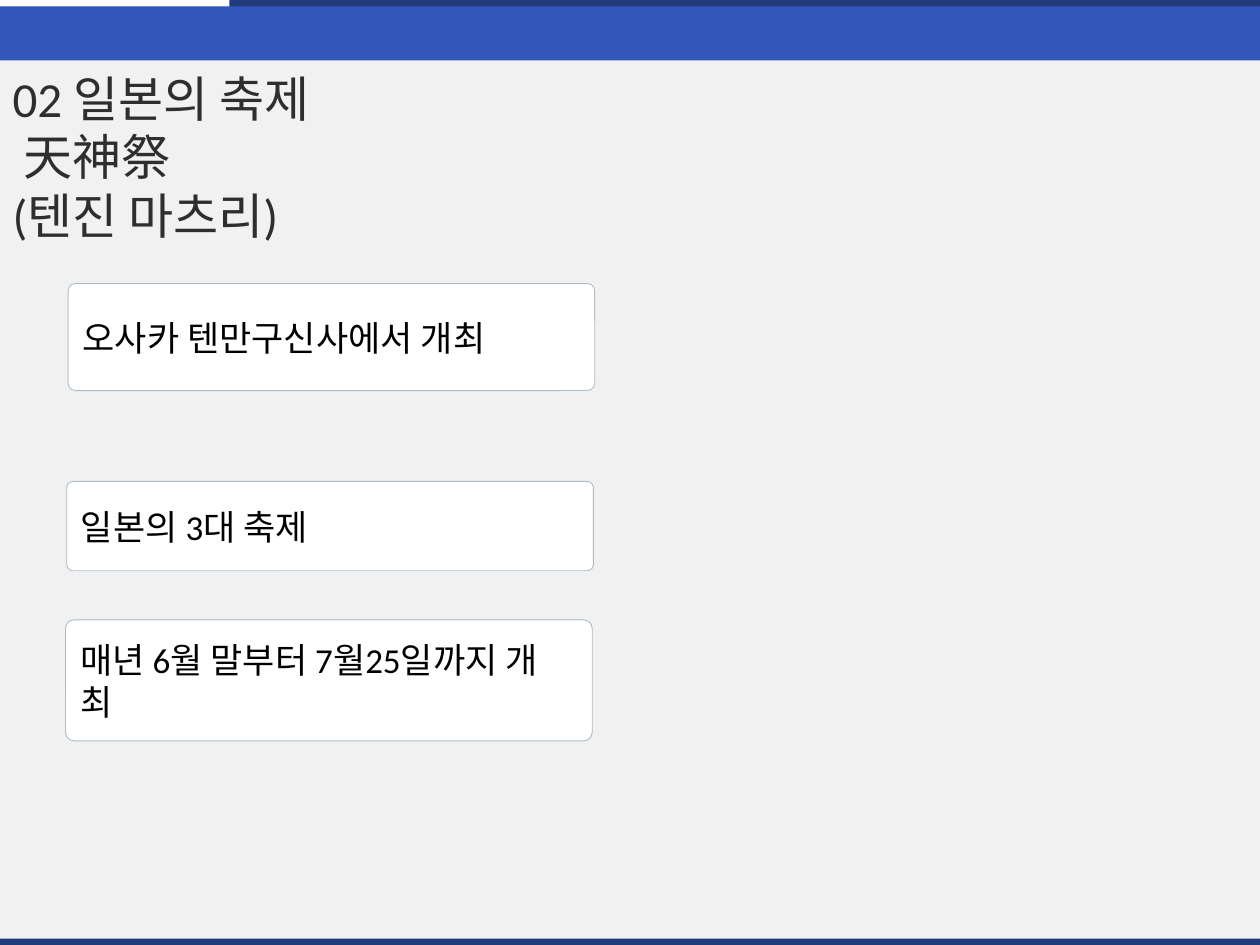
from lxml.etree import SubElement
from pptx import Presentation
from pptx.dml.color import RGBColor
from pptx.enum.shapes import MSO_SHAPE as Shape
from pptx.enum.text import MSO_ANCHOR as Anchor, MSO_AUTO_SIZE as AutoSize, PP_ALIGN as Align
from pptx.oxml.ns import qn
from pptx.util import Inches, Pt

WHITE = RGBColor(0xFF, 0xFF, 0xFF)
BLACK = RGBColor(0x00, 0x00, 0x00)
PALE_GREY = RGBColor(0xF1, 0xF1, 0xF1)
BLUE = RGBColor(0x30, 0x57, 0xB9)
NAVY = RGBColor(0x20, 0x3A, 0x7B)
CARD_LINE = RGBColor(0x1F, 0x4E, 0x79)
TITLE_GREY = RGBColor(0x2D, 0x2E, 0x2D)
FONT = "Calibri"

# Content
TITLE_LINES = ["02 일본의 축제", " 天神祭", "(텐진 마츠리)"]
# Cards: left, top, height, text runs with their sizes
CARDS = [
    (0.54, 2.25, 0.85, [("오사카 텐만구신사에서 개최", 20), (" ", 18)]),
    (0.53, 3.82, 0.71, [("일본의 3대 축제", 20)]),
    (0.52, 4.92, 0.96, [("매년 6월 말부터 7월25일까지 개\t최", 20)]),
]
CARD_WIDTH = 4.18
CARD_TAB = 0.65

# Bands: left, top, width, height, colour
SLIDE_WIDTH, SLIDE_HEIGHT, STRIP = 10, 7.5, 0.05
BANDS = [
    (0, 0, SLIDE_WIDTH, SLIDE_HEIGHT, PALE_GREY),
    (0, 0.03, SLIDE_WIDTH, 0.45, BLUE),
    (0, 0, SLIDE_WIDTH, STRIP, NAVY),
    (0, 0, 1.82, STRIP, WHITE),
    (0, SLIDE_HEIGHT - STRIP, SLIDE_WIDTH, STRIP, NAVY),
]


def add_box(slide, kind, left, top, width, height, colour):
    shape = slide.shapes.add_shape(
        kind, Inches(left), Inches(top), Inches(width), Inches(height))
    shape.shadow.inherit = False
    shape.fill.solid()
    shape.fill.fore_color.rgb = colour
    shape.line.fill.background()
    return shape


def add_run(paragraph, text, size, colour):
    run = paragraph.add_run()
    run.text = text
    run.font.name = FONT
    run.font.size = Pt(size)
    run.font.color.rgb = colour


def add_card(slide, left, top, height, runs):
    card = add_box(slide, Shape.ROUNDED_RECTANGLE, left, top, CARD_WIDTH, height, WHITE)
    card.adjustments[0] = 0.07
    card.line.color.rgb = CARD_LINE
    card.line.width = Pt(0.5)
    line_colour = card.line._get_or_add_ln().find(".//" + qn("a:srgbClr"))
    SubElement(line_colour, qn("a:alpha"), val="35000")

    frame = card.text_frame
    frame.word_wrap = True
    frame.vertical_anchor = Anchor.MIDDLE
    paragraph = frame.paragraphs[0]
    paragraph.alignment = Align.LEFT
    if any("\t" in text for text, _ in runs):
        tab_list = SubElement(paragraph._p.get_or_add_pPr(), qn("a:tabLst"))
        SubElement(tab_list, qn("a:tab"), pos=str(Inches(CARD_TAB)), algn="l")
    for text, size in runs:
        add_run(paragraph, text, size, BLACK)


def fill_title(title):
    title.left, title.top = Inches(0), Inches(0.49)
    title.width, title.height = Inches(9.61), Inches(1.49)
    frame = title.text_frame
    frame.word_wrap = True
    frame.auto_size = AutoSize.SHAPE_TO_FIT_TEXT
    frame.vertical_anchor = Anchor.TOP
    for index, line in enumerate(TITLE_LINES):
        paragraph = frame.add_paragraph() if index else frame.paragraphs[0]
        paragraph.alignment = Align.LEFT
        add_run(paragraph, line, 28, TITLE_GREY)


def main():
    presentation = Presentation()
    presentation.slide_width = Inches(SLIDE_WIDTH)
    presentation.slide_height = Inches(SLIDE_HEIGHT)
    slide = presentation.slides.add_slide(presentation.slide_layouts[5])

    # Background and bands
    for band in BANDS:
        add_box(slide, Shape.RECTANGLE, *band)

    # Title, brought in front of the bands
    title = slide.shapes.title
    fill_title(title)
    slide.shapes._spTree.append(title._element)

    # Cards
    for card in CARDS:
        add_card(slide, *card)

    presentation.save("out.pptx")


if __name__ == "__main__":
    main()
